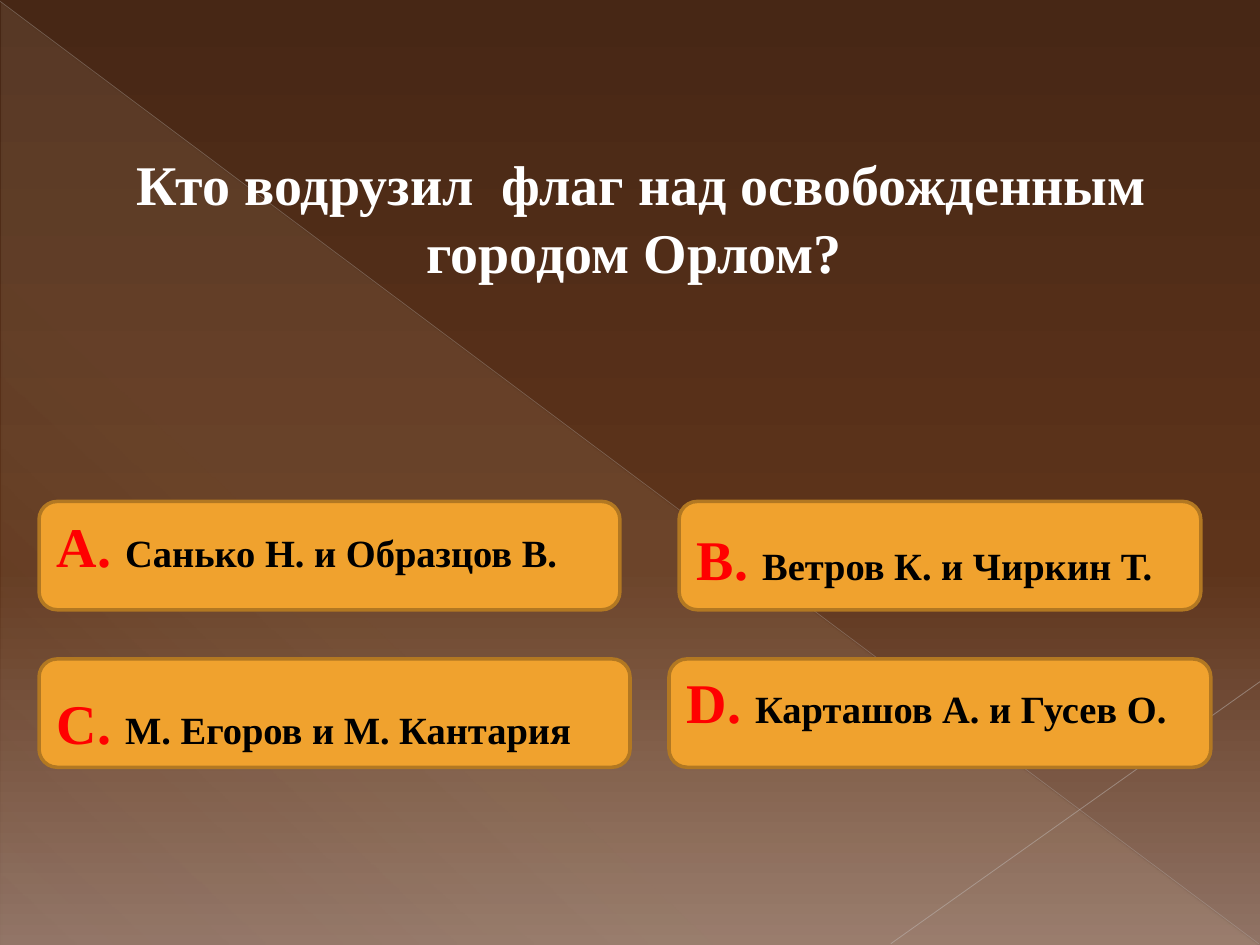
from lxml import etree
from pptx import Presentation
from pptx import util as u
from pptx.dml.color import RGBColor
from pptx.enum import shapes, text
from pptx.oxml.ns import qn

Inches, Pt = u.Inches, u.Pt

WHITE = RGBColor(0xFF, 0xFF, 0xFF)
BLACK = RGBColor(0x00, 0x00, 0x00)
RED = RGBColor(0xFF, 0x00, 0x00)
AMBER = RGBColor(0xF0, 0xA2, 0x2E)
OCHRE = RGBColor(0xB2, 0x78, 0x22)
CREAM = RGBColor(0xFB, 0xEE, 0xC9)
GREY = RGBColor(0xBC, 0xB7, 0xB4)
LIGHT_GREY = RGBColor(0xC4, 0xBF, 0xBD)
BACKDROP = [
    (0, RGBColor(0x47, 0x27, 0x15), 100),
    (60, RGBColor(0x5E, 0x34, 0x1B), 100),
    (100, RGBColor(0x90, 0x73, 0x65), 100),
]
SHEEN = [(0, CREAM, 10), (70, CREAM, 8), (100, CREAM, 1)]


def set_alpha(color_element, percent):
    alpha = etree.SubElement(color_element, qn("a:alpha"))
    alpha.set("val", str(percent * 1000))


def set_gradient(parent, stops, angle):
    """Replace the solid fill of parent by a linear gradient."""
    gradient = etree.Element(qn("a:gradFill"), rotWithShape="1")
    stop_list = etree.SubElement(gradient, qn("a:gsLst"))
    for position, color, opacity in stops:
        stop = etree.SubElement(stop_list, qn("a:gs"), pos=str(position * 1000))
        set_alpha(etree.SubElement(stop, qn("a:srgbClr"), val=str(color)), opacity)
    etree.SubElement(gradient, qn("a:lin"), ang=str(angle * 60000), scaled="0")
    parent.replace(parent.find(qn("a:solidFill")), gradient)


class QuizSlide:
    font = "Times New Roman"
    large, small = Pt(32), Pt(22)

    def __init__(self, slide):
        self.slide = slide

    def background(self, stops, angle):
        fill = self.slide.background.fill
        fill.solid()
        fill.fore_color.rgb = stops[0][1]
        set_gradient(self.slide.element.find(".//" + qn("p:bgPr")), stops, angle)

    def shape(self, kind, left, top, width, height, color):
        shape = self.slide.shapes.add_shape(
            kind, Inches(left), Inches(top), Inches(width), Inches(height))
        shape.shadow.inherit = False
        shape.fill.solid()
        shape.fill.fore_color.rgb = color
        return shape

    def sheen(self, left, top, width, height, stops, angle):
        triangle = self.shape(shapes.MSO_SHAPE.RIGHT_TRIANGLE,
                              left, top, width, height, stops[0][1])
        triangle.line.fill.background()
        set_gradient(triangle.element.spPr, stops, angle)

    def ray(self, start, end, color, width, opacity):
        points = [Inches(value) for value in (*start, *end)]
        ray = self.slide.shapes.add_connector(shapes.MSO_CONNECTOR.STRAIGHT, *points)
        ray.line.color.rgb = color
        ray.line.width = Pt(width)
        properties = ray.element.spPr
        set_alpha(properties.find(".//" + qn("a:srgbClr")), opacity)
        etree.SubElement(properties, qn("a:effectLst"))

    def paragraph(self, shape, top_margin, align):
        frame = shape.text_frame
        frame.word_wrap = True
        frame.vertical_anchor = text.MSO_ANCHOR.TOP
        frame.margin_top = Inches(top_margin)
        frame.margin_bottom = 0
        paragraph = frame.paragraphs[0]
        paragraph.alignment = align
        paragraph.font.name = self.font
        paragraph.font.bold = True
        return paragraph

    def question(self, left, top, width, height, wording, top_margin):
        box = self.slide.shapes.add_textbox(
            Inches(left), Inches(top), Inches(width), Inches(height))
        paragraph = self.paragraph(box, top_margin, text.PP_ALIGN.CENTER)
        paragraph.font.size = self.large
        paragraph.font.color.rgb = WHITE
        paragraph.add_run().text = wording

    def answer(self, left, top, width, letter, wording, top_margin):
        button = self.shape(shapes.MSO_SHAPE.FLOWCHART_ALTERNATE_PROCESS,
                            left, top, width, 0.86, AMBER)
        button.line.color.rgb = OCHRE
        button.line.width = Pt(2)
        paragraph = self.paragraph(button, top_margin, text.PP_ALIGN.LEFT)
        for part, size, color in ((letter + ". ", self.large, RED),
                                  (wording, self.small, BLACK)):
            run = paragraph.add_run()
            run.text = part
            run.font.size = size
            run.font.color.rgb = color


def main():
    deck = Presentation()
    deck.slide_width, deck.slide_height = Inches(10), Inches(7.5)
    quiz = QuizSlide(deck.slides.add_slide(deck.slide_layouts[6]))

    # Backdrop with sheen and light rays
    quiz.background(BACKDROP, 90)
    quiz.sheen(0.01, 0.02, 9.98, 7.48, SHEEN, 133)
    quiz.ray((0, 0.01), (9.99, 7.49), GREY, 0.39, 35)
    quiz.ray((10, 5.41), (7.07, 7.49), LIGHT_GREY, 0.47, 45)

    # Answers, two by two
    upper, lower = 3.98, 5.23
    quiz.answer(0.31, upper, 4.61, "А", "Санько Н. и Образцов В.", 0.04)
    quiz.answer(0.31, lower, 4.69, "С", "М. Егоров и М. Кантария", 0.19)
    quiz.answer(5.39, upper, 4.14, "В", "Ветров К. и Чиркин Т.", 0.14)
    quiz.answer(5.31, lower, 4.3, "D", "Карташов А. и Гусев О.", 0.03)

    # Question
    quiz.question(0.23, 1.08, 9.61, 2.02,
                  " Кто водрузил  флаг над освобожденным городом Орлом?", 0.11)

    deck.save("out.pptx")


if __name__ == "__main__":
    main()
